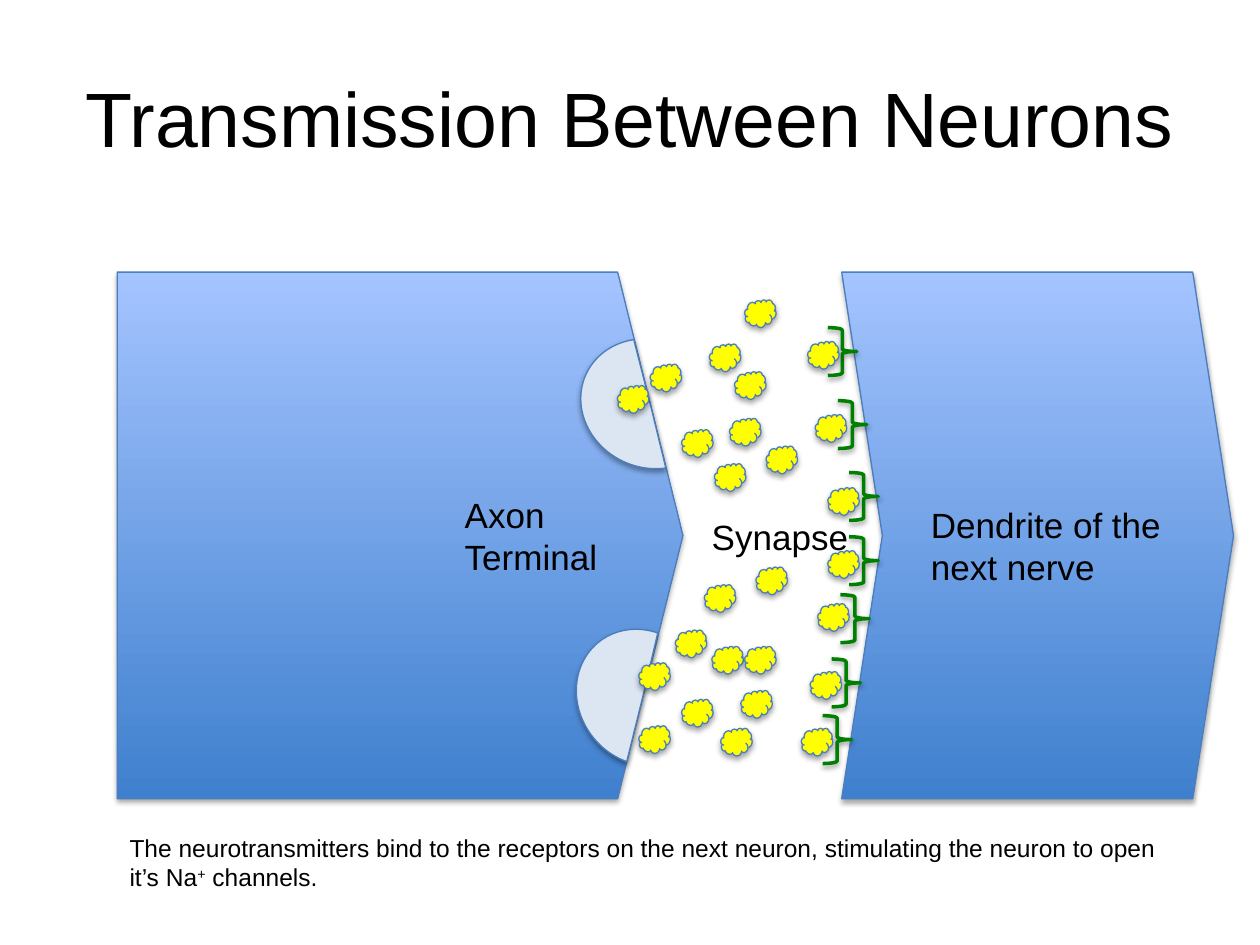
"""Build a slide on how neurotransmitters carry a signal across a synapse."""
import pptx
import pptx.dml.color
import pptx.enum.shapes
import pptx.enum.text
import pptx.oxml
import pptx.oxml.ns
import pptx.util

Inches = pptx.util.Inches
Pt = pptx.util.Pt
SHAPE = pptx.enum.shapes.MSO_SHAPE

FONT = "Arial"
BLACK = "000000"
OUTLINE = "4B7EBC"
NEURON_GRADIENT = ("3F80CE", "A4C4FF")
VESICLE_FILL = "DCE6F2"
TRANSMITTER_FILL = "FFFF00"
RECEPTOR_LINE = "008000"

NEURON_TOP, NEURON_HEIGHT = 2.16, 4.18
RECEPTOR_SIZE = (0.23, 0.38)
VESICLE_SIZE = (1.12, 1.01)
VESICLE_ANGLES = (30.848, 138.416)
TRANSMITTER_SIZE = (0.25, 0.22)

RECEPTORS = [
    (6.57, 2.6), (6.65, 3.18), (6.74, 3.75), (6.74, 4.26),
    (6.67, 4.72), (6.6, 5.23), (6.53, 5.68),
]
VESICLES = [(4.6, 2.7, 24.9), (4.54, 5.03, 52.5)]
TRANSMITTERS = [
    (5.16, 2.89), (5.91, 2.38), (6.08, 3.54), (5.67, 3.68), (4.9, 3.06),
    (5.79, 3.32), (6.47, 3.29), (5.41, 3.41), (6.57, 3.87), (5.83, 2.95),
    (6.41, 2.71), (5.63, 2.73), (6, 4.5), (5.07, 5.26), (5.88, 5.48),
    (5.65, 5.13), (5.07, 5.76), (5.36, 5), (6.43, 5.33), (6.36, 5.78),
    (5.41, 5.55), (5.72, 5.78), (5.91, 5.13), (6.49, 4.79), (5.59, 4.64),
    (6.57, 4.37),
]
LABELS = [
    ("Axon\nTerminal", (3.59, 3.87, 1.46, 0.77)),
    ("Synapse", (5.55, 4.04, 1.39, 0.44)),
    ("Dendrite of the next nerve", (7.29, 3.95, 2.09, 0.77)),
]
CAPTION = [
    ("The neurotransmitters bind to the receptors on the next neuron, "
     "stimulating the neuron to open it’s Na", False),
    ("+", True),
    (" channels.", False),
]


def color(hex_string):
    """Turn a hex string into a colour."""
    return pptx.dml.color.RGBColor.from_string(hex_string)


def add_shadow(part, distance=1.8, opacity=35):
    """Give a part a soft shadow straight below it."""
    part.shadow.inherit = False
    effects = part._element.spPr.find(pptx.oxml.ns.qn("a:effectLst"))
    effects.append(pptx.oxml.parse_xml(
        f'<a:outerShdw {pptx.oxml.ns.nsdecls("a")} blurRad="{Pt(3.1)}" '
        f'dist="{Pt(distance)}" dir="5400000" rotWithShape="0">'
        f'<a:srgbClr val="{BLACK}"><a:alpha val="{opacity * 1000}"/>'
        '</a:srgbClr></a:outerShdw>'))


def add_part(slide, preset, box, line=OUTLINE, width=0.75, adjustments=()):
    """Add an outlined preset shape with its adjustments."""
    part = slide.shapes.add_shape(preset, *map(Inches, box))
    for index, value in enumerate(adjustments):
        part.adjustments[index] = value
    part.line.color.rgb = color(line)
    part.line.width = Pt(width)
    return part


def add_neuron(slide, preset, left, width, point):
    """Add a neuron body with a vertical gradient."""
    neuron = add_part(slide, preset, (left, NEURON_TOP, width, NEURON_HEIGHT),
                      adjustments=[point])
    neuron.fill.gradient()
    neuron.fill.gradient_angle = 90
    for stop, shade in zip(neuron.fill.gradient_stops, NEURON_GRADIENT):
        stop.color.rgb = color(shade)
    add_shadow(neuron)


def add_receptor(slide, left, top):
    """Add a receptor brace on the dendrite."""
    receptor = add_part(slide, SHAPE.RIGHT_BRACE, (left, top, *RECEPTOR_SIZE),
                        RECEPTOR_LINE, 2)
    receptor.fill.background()
    add_shadow(receptor, distance=1.6, opacity=38)


def add_vesicle(slide, left, top, rotation):
    """Add a vesicle opening at the axon membrane."""
    vesicle = add_part(slide, SHAPE.PIE, (left, top, *VESICLE_SIZE),
                       adjustments=VESICLE_ANGLES)
    vesicle.rotation = rotation
    vesicle.fill.solid()
    vesicle.fill.fore_color.rgb = color(VESICLE_FILL)
    add_shadow(vesicle)


def add_transmitter(slide, left, top):
    """Add one neurotransmitter molecule."""
    transmitter = add_part(slide, SHAPE.CLOUD, (left, top, *TRANSMITTER_SIZE))
    transmitter.fill.solid()
    transmitter.fill.fore_color.rgb = color(TRANSMITTER_FILL)
    add_shadow(transmitter)


def add_text(slide, text, box, size):
    """Add a wrapping text box and return its frame."""
    frame = slide.shapes.add_textbox(*map(Inches, box)).text_frame
    frame.word_wrap = True
    frame.text = text
    format_runs(frame, size)
    return frame


def format_runs(frame, size):
    """Apply the slide's font to every run of a frame."""
    for paragraph in frame.paragraphs:
        for run in paragraph.runs:
            run.font.name = FONT
            run.font.size = Pt(size)
            run.font.color.rgb = color(BLACK)


def add_title(slide, text):
    """Add the centred slide title."""
    frame = add_text(slide, text, (0.5, 0.3, 9, 1.25), 44)
    frame.vertical_anchor = pptx.enum.text.MSO_ANCHOR.MIDDLE
    frame.paragraphs[0].alignment = pptx.enum.text.PP_ALIGN.CENTER


def add_caption(slide, pieces):
    """Add the explanation, with raised pieces as superscript."""
    frame = add_text(slide, "", (0.93, 6.56, 8.57, 0.57), 14)
    for text, raised in pieces:
        run = frame.paragraphs[0].add_run()
        run.text = text
        if raised:
            run.font._element.set("baseline", "30000")
    format_runs(frame, 14)


def main():
    """Build and save the slide."""
    deck = pptx.Presentation()
    deck.slide_width, deck.slide_height = Inches(10), Inches(7.5)
    slide = deck.slides.add_slide(deck.slide_layouts[6])
    add_title(slide, "Transmission Between Neurons")
    add_neuron(slide, SHAPE.PENTAGON, 0.93, 4.49, 0.124)
    add_neuron(slide, SHAPE.CHEVRON, 6.68, 3.11, 0.104)
    for text, box in LABELS:
        add_text(slide, text, box, 20)
    add_caption(slide, CAPTION)
    for receptor in RECEPTORS:
        add_receptor(slide, *receptor)
    for vesicle in VESICLES:
        add_vesicle(slide, *vesicle)
    for transmitter in TRANSMITTERS:
        add_transmitter(slide, *transmitter)
    deck.save("out.pptx")


if __name__ == "__main__":
    main()
